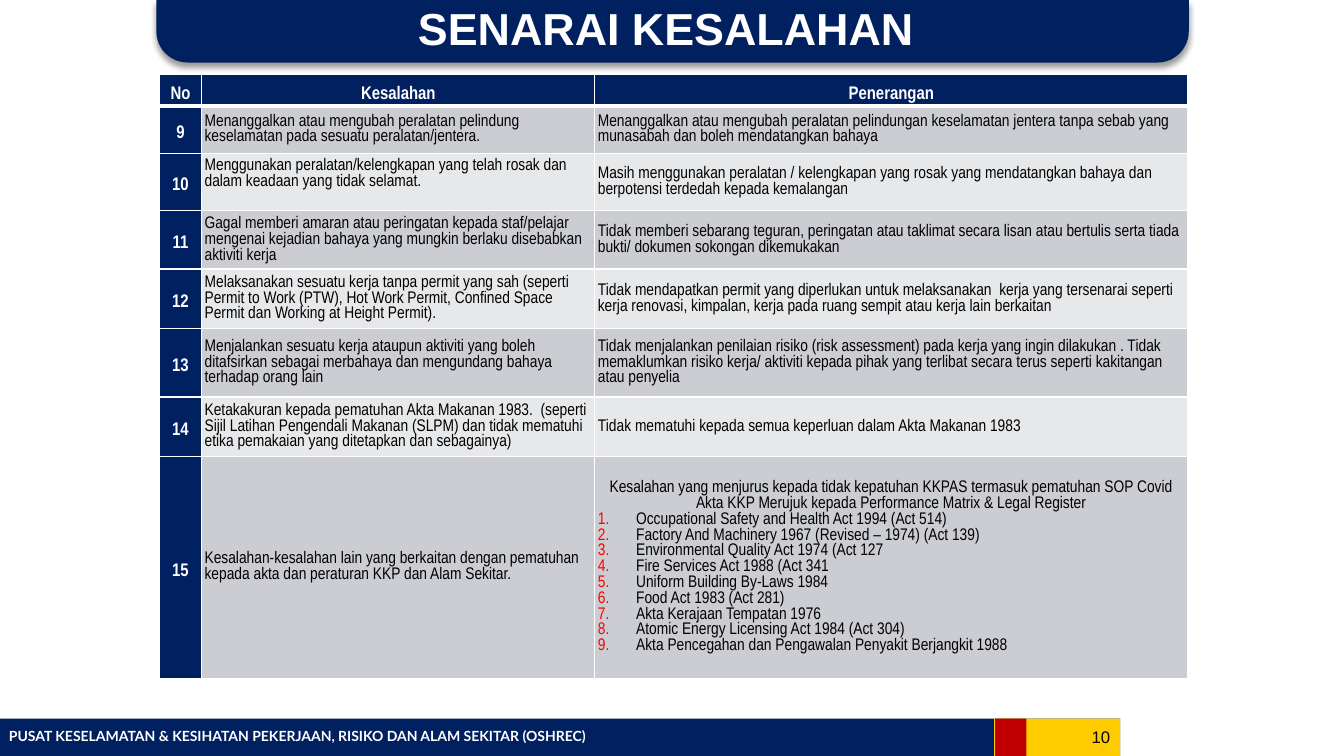
from lxml import etree
from pptx import Presentation
from pptx import util as u
from pptx.dml.color import RGBColor
from pptx.enum import shapes, text
from pptx.oxml import parse_xml
from pptx.oxml.ns import nsdecls, qn

COLORS = {"navy": "002060", "yellow": "FFCC00", "red": "C00000", "number": "FF0000",
          "white": "FFFFFF", "black": "000000", "dark_row": "CCCDD2", "light_row": "E7E8EA"}
Inches = u.Inches


def add_block(kind, color, left, top, width, height):
    block = slide.shapes.add_shape(kind, Inches(left), Inches(top), Inches(width), Inches(height))
    block.shadow.inherit = False
    block.fill.solid()
    block.fill.fore_color.rgb = RGBColor.from_string(COLORS[color])
    block.line.fill.background()
    return block


def format_text(para, font_name, size, color, bold=False, align=text.PP_ALIGN.LEFT):
    para.alignment = align
    for span in para.runs:
        span.font.name = font_name
        span.font.size = u.Pt(size)
        span.font.bold = bold
        span.font.color.rgb = RGBColor.from_string(COLORS[color])


deck = Presentation()
deck.slide_width, deck.slide_height = Inches(13.33), Inches(7.5)
slide = deck.slides.add_slide(deck.slide_layouts[5])

# Title banner with a soft shadow
banner = add_block(shapes.MSO_SHAPE.ROUND_2_SAME_RECTANGLE, "navy", 1.55, 0, 10.24, 0.62)
banner.rotation = 180
banner.adjustments[0] = 0.5
effects = banner._element.spPr.find(qn("a:effectLst"))
effects.append(parse_xml(
    f'<a:outerShdw {nsdecls("a")} blurRad="{u.Pt(4)}" dist="{u.Pt(3)}" dir="5400000" rotWithShape="0">'
    f'<a:srgbClr val="{COLORS["black"]}"><a:alpha val="40000"/></a:srgbClr></a:outerShdw>'))

# Footer bar
for color, left, width in [("navy", 0, 11.11), ("yellow", 9.86, 1.25), ("red", 9.87, 0.31)]:
    add_block(shapes.MSO_SHAPE.RECTANGLE, color, left, 7.13, width, 0.37)

footer_texts = [
    ("PUSAT KESELAMATAN & KESIHATAN PEKERJAAN, RISIKO DAN ALAM SEKITAR (OSHREC)",
     (-0.01, 7.17, 9.29, 0.27), "Lato", 10, "white", True, text.PP_ALIGN.LEFT),
    ("10", (9.98, 7.13, 1.13, 0.35), "Arial", 12, "black", False, text.PP_ALIGN.RIGHT),
]
for wording, place, font_name, size, color, bold, align in footer_texts:
    box = slide.shapes.add_textbox(*[Inches(length) for length in place])
    frame = box.text_frame
    frame.word_wrap = True
    frame.vertical_anchor = text.MSO_ANCHOR.MIDDLE
    frame.text = wording
    format_text(frame.paragraphs[0], font_name, size, color, bold, align)

# Title, brought in front of the banner
title = slide.shapes.title
title.left, title.top, title.width, title.height = [Inches(n) for n in (1.8, 0.05, 9.61, 0.45)]
title.text_frame.text = "SENARAI KESALAHAN"
title.text_frame.vertical_anchor = text.MSO_ANCHOR.MIDDLE
title.text_frame.auto_size = text.MSO_AUTO_SIZE.NONE
format_text(title.text_frame.paragraphs[0], "Arial", 32, "white", True, text.PP_ALIGN.CENTER)
slide.shapes._spTree.append(title._element)

# Table contents
offences = [
    ("No", "Kesalahan", "Penerangan"),
    ("9", "Menanggalkan atau mengubah peralatan pelindung keselamatan pada sesuatu peralatan/jentera.",
     "Menanggalkan atau mengubah peralatan pelindungan keselamatan jentera tanpa sebab yang "
     "munasabah dan boleh mendatangkan bahaya"),
    ("10", "Menggunakan peralatan/kelengkapan yang telah rosak dan dalam keadaan yang tidak selamat.",
     "Masih menggunakan peralatan / kelengkapan yang rosak yang mendatangkan bahaya dan "
     "berpotensi terdedah kepada kemalangan"),
    ("11", "Gagal memberi amaran atau peringatan kepada staf/pelajar mengenai kejadian bahaya "
     "yang mungkin berlaku disebabkan aktiviti kerja",
     "Tidak memberi sebarang teguran, peringatan atau taklimat secara lisan atau bertulis serta "
     "tiada bukti/ dokumen sokongan dikemukakan"),
    ("12", "Melaksanakan sesuatu kerja tanpa permit yang sah (seperti Permit to Work (PTW), "
     "Hot Work Permit, Confined Space Permit dan Working at Height Permit).",
     "Tidak mendapatkan permit yang diperlukan untuk melaksanakan  kerja yang tersenarai seperti "
     "kerja renovasi, kimpalan, kerja pada ruang sempit atau kerja lain berkaitan"),
    ("13", "Menjalankan sesuatu kerja ataupun aktiviti yang boleh ditafsirkan sebagai merbahaya "
     "dan mengundang bahaya terhadap orang lain",
     "Tidak menjalankan penilaian risiko (risk assessment) pada kerja yang ingin dilakukan . Tidak "
     "memaklumkan risiko kerja/ aktiviti kepada pihak yang terlibat secara terus seperti kakitangan "
     "atau penyelia"),
    ("14", "Ketakakuran kepada pematuhan Akta Makanan 1983.  (seperti Sijil Latihan Pengendali "
     "Makanan (SLPM) dan tidak mematuhi etika pemakaian yang ditetapkan dan sebagainya)",
     "Tidak mematuhi kepada semua keperluan dalam Akta Makanan 1983"),
    ("15", "Kesalahan-kesalahan lain yang berkaitan dengan pematuhan kepada akta dan peraturan "
     "KKP dan Alam Sekitar.",
     "Kesalahan yang menjurus kepada tidak kepatuhan KKPAS termasuk pematuhan SOP Covid\n"
     "Akta KKP Merujuk kepada Performance Matrix & Legal Register"),
]
acts = [
    "Occupational Safety and Health Act 1994 (Act 514)",
    "Factory And Machinery 1967 (Revised – 1974) (Act 139)",
    "Environmental Quality Act 1974 (Act 127",
    "Fire Services Act 1988 (Act 341",
    "Uniform Building By-Laws 1984",
    "Food Act 1983 (Act 281)",
    "Akta Kerajaan Tempatan 1976",
    "Atomic Energy Licensing Act 1984 (Act 304)",
    "Akta Pencegahan dan Pengawalan Penyakit Berjangkit 1988",
]
column_widths = [0.42, 3.9, 5.88]
row_heights = [0.31, 0.47, 0.57, 0.58, 0.59, 0.68, 0.59, 2.2]

# Table grid
table = slide.shapes.add_table(len(row_heights), len(column_widths), Inches(1.58), Inches(0.74),
                               Inches(sum(column_widths)), Inches(sum(row_heights))).table
table.horz_banding = False
for column, width in zip(table.columns, column_widths):
    column.width = Inches(width)
for row, height in zip(table.rows, row_heights):
    row.height = Inches(height)

# Table cells
for row_index, offence in enumerate(offences):
    for column_index, wording in enumerate(offence):
        cell = table.cell(row_index, column_index)
        is_heading = row_index == 0 or column_index == 0
        cell.text_frame.text = wording
        cell.vertical_anchor = text.MSO_ANCHOR.MIDDLE
        cell.margin_left = cell.margin_right = Inches(0.04 if row_index == 0 else 0.03)
        cell.margin_top = cell.margin_bottom = 0
        for para in cell.text_frame.paragraphs:
            if is_heading:
                format_text(para, "Arial Narrow", 13, "white", True, text.PP_ALIGN.CENTER)
                para.line_spacing = 1.5
            else:
                several = len(cell.text_frame.paragraphs) > 1
                format_text(para, "Arial Narrow", 12, "black",
                            align=text.PP_ALIGN.CENTER if several else text.PP_ALIGN.LEFT)

        # White borders, thicker below the header row
        properties = cell._tc.get_or_add_tcPr()
        for side in ("L", "R", "T", "B"):
            thick = (row_index, side) in [(0, "B"), (1, "T")]
            properties.append(parse_xml(
                f'<a:ln{side} {nsdecls("a")} w="{u.Pt(3 if thick else 1)}"><a:solidFill>'
                f'<a:srgbClr val="{COLORS["white"]}"/></a:solidFill></a:ln{side}>'))
        row_color = "dark_row" if row_index % 2 else "light_row"
        cell.fill.solid()
        cell.fill.fore_color.rgb = RGBColor.from_string(COLORS["navy" if is_heading else row_color])

# Offence 10 sits one line above the others
table.cell(2, 1).margin_bottom = Inches(0.16)

# Numbered acts in the last cell
for act in acts:
    para = table.cell(7, 2).text_frame.add_paragraph()
    para.text = act
    settings = para._p.get_or_add_pPr()
    settings.set("marL", str(Inches(0.38)))
    settings.set("indent", str(-Inches(0.38)))
    bullet_color = etree.SubElement(settings, qn("a:buClr"))
    etree.SubElement(bullet_color, qn("a:srgbClr"), val=COLORS["number"])
    etree.SubElement(settings, qn("a:buFont"), typeface="+mj-lt")
    etree.SubElement(settings, qn("a:buAutoNum"), type="arabicPeriod")
    format_text(para, "Arial Narrow", 12, "black")

deck.save("out.pptx")
